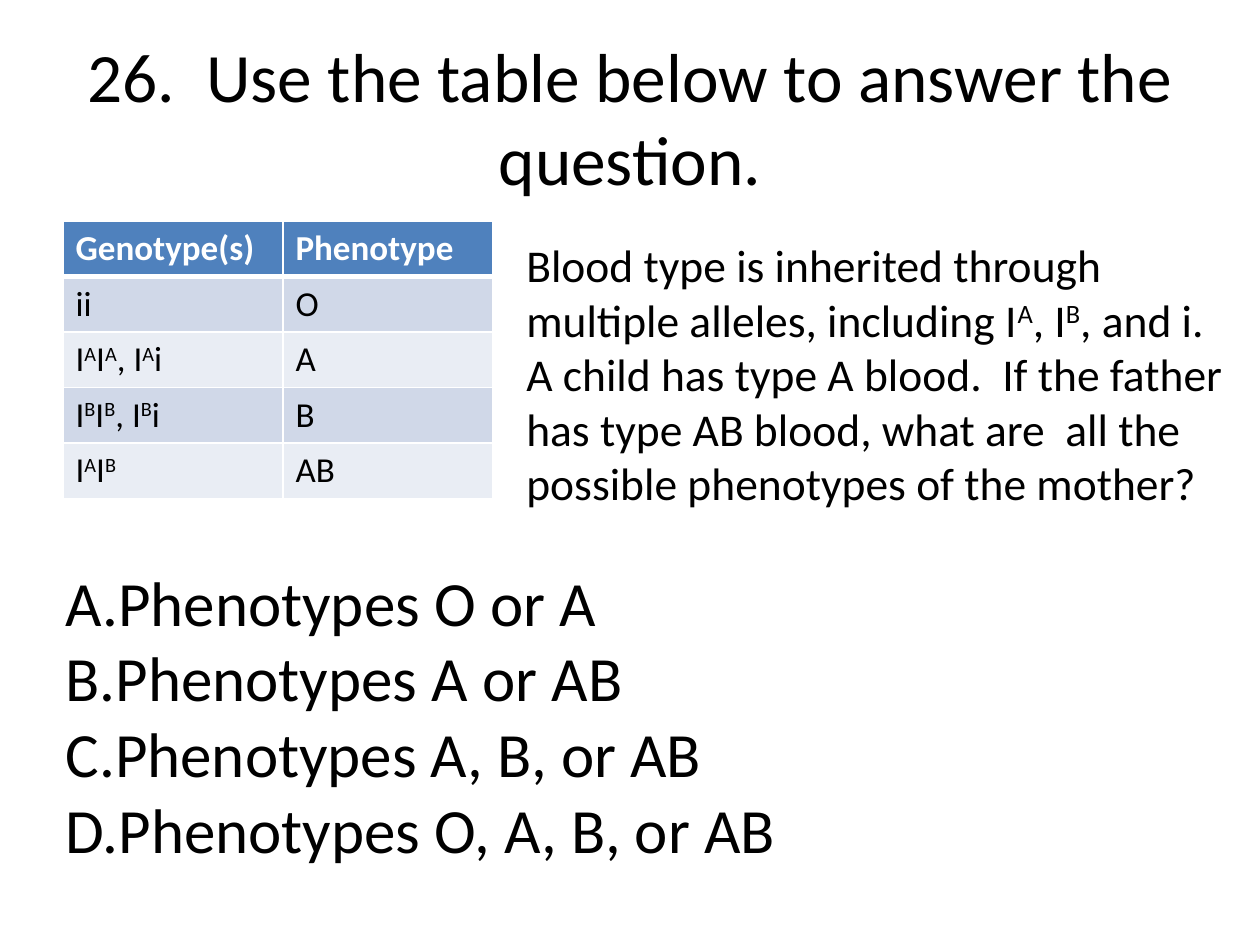
import pptx
import pptx.util
import pptx.dml.color
import pptx.enum.text
import pptx.oxml
import pptx.oxml.ns
import lxml.etree

PX = 914400 // 126  # one px in EMU
BLACK = pptx.dml.color.RGBColor(0x00, 0x00, 0x00)
WHITE = pptx.dml.color.RGBColor(0xFF, 0xFF, 0xFF)
HEADER_BLUE = pptx.dml.color.RGBColor(0x4F, 0x81, 0xBD)
BAND_DARK = pptx.dml.color.RGBColor(0xD0, 0xD8, 0xE8)
BAND_LIGHT = pptx.dml.color.RGBColor(0xE9, 0xED, 0xF4)


def add_spans(para, marked, size, color=BLACK, bold=False):
    """Add runs to a paragraph; text between ^ marks is superscript."""
    for index, words in enumerate(marked.split("^")):
        if not words:
            continue
        span = para.add_run()
        span.text = words
        span.font.name = "Calibri"
        span.font.size = pptx.util.Pt(size)
        span.font.color.rgb = color
        span.font.bold = bold
        if index % 2:
            span._r.get_or_add_rPr().set("baseline", "30000")


def place(shape, left, top, width, height):
    shape.left, shape.top = left * PX, top * PX
    shape.width, shape.height = width * PX, height * PX


deck = pptx.Presentation()
deck.slide_width, deck.slide_height = pptx.util.Inches(10), pptx.util.Inches(7.5)
page = deck.slides.add_slide(deck.slide_layouts[1])

# Title
title = page.shapes.title
place(title, 63, 38, 1134, 157)
title.text_frame.auto_size = pptx.enum.text.MSO_AUTO_SIZE.NONE
title.text_frame.vertical_anchor = pptx.enum.text.MSO_ANCHOR.MIDDLE
heading = title.text_frame.paragraphs[0]
heading.alignment = pptx.enum.text.PP_ALIGN.CENTER
add_spans(heading, "26.  Use the table below to answer the question.", 39.6)

# Genotype table
rows = [
    ("Genotype(s)", "Phenotype"),
    ("ii", "O"),
    ("I^A^I^A^, I^A^i", "A"),
    ("I^B^I^B^, I^B^i", "B"),
    ("I^A^I^B^", "AB"),
]
ROW_HEIGHT = 55
table = page.shapes.add_table(
    len(rows), 2, 63 * PX, 221 * PX, 430 * PX, len(rows) * ROW_HEIGHT * PX
).table
table.columns[0].width = 220 * PX
table.columns[1].width = 210 * PX
for r, row in enumerate(rows):
    table.rows[r].height = ROW_HEIGHT * PX
    header = r == 0
    for c, words in enumerate(row):
        cell = table.cell(r, c)
        add_spans(cell.text_frame.paragraphs[0], words, 20,
                  WHITE if header else BLACK, header)
        # White borders, thicker under the header; they precede the fill in XML
        properties = cell._tc.get_or_add_tcPr()
        for side in ("L", "R", "T", "B"):
            thick = (header and side == "B") or (r == 1 and side == "T")
            border = lxml.etree.SubElement(
                properties, pptx.oxml.ns.qn("a:ln" + side),
                w=str(pptx.util.Pt(3 if thick else 1)))
            paint = lxml.etree.SubElement(border, pptx.oxml.ns.qn("a:solidFill"))
            lxml.etree.SubElement(paint, pptx.oxml.ns.qn("a:srgbClr"), val=str(WHITE))
        cell.fill.solid()
        cell.fill.fore_color.rgb = (
            HEADER_BLUE if header else BAND_DARK if r % 2 else BAND_LIGHT)

# Question
question = page.shapes.add_textbox(514 * PX, 231 * PX, 746 * PX, 289 * PX)
question.text_frame.word_wrap = True
add_spans(
    question.text_frame.paragraphs[0],
    "Blood type is inherited through multiple alleles, including I^A^, I^B^, and i.  "
    "A child has type A blood.  If the father has type AB blood, what are  all the "
    "possible phenotypes of the mother?", 26)

# Lettered answers
answers = page.placeholders[1]
place(answers, 53, 557, 1029, 318)
frame = answers.text_frame
frame.auto_size = pptx.enum.text.MSO_AUTO_SIZE.NONE
choices = ["O or A", "A or AB", "A, B, or AB", "O, A, B, or AB"]
for index, choice in enumerate(choices):
    para = frame.add_paragraph() if index else frame.paragraphs[0]
    para.space_before = pptx.util.Pt(0)
    properties = para._p.get_or_add_pPr()
    properties.set("marL", str(48 * PX))
    properties.set("indent", str(-48 * PX))
    lxml.etree.SubElement(properties, pptx.oxml.ns.qn("a:buFont"), typeface="+mj-lt")
    lxml.etree.SubElement(
        properties, pptx.oxml.ns.qn("a:buAutoNum"), type="alphaUcPeriod")
    add_spans(para, "Phenotypes " + choice, 36)

deck.save("out.pptx")
